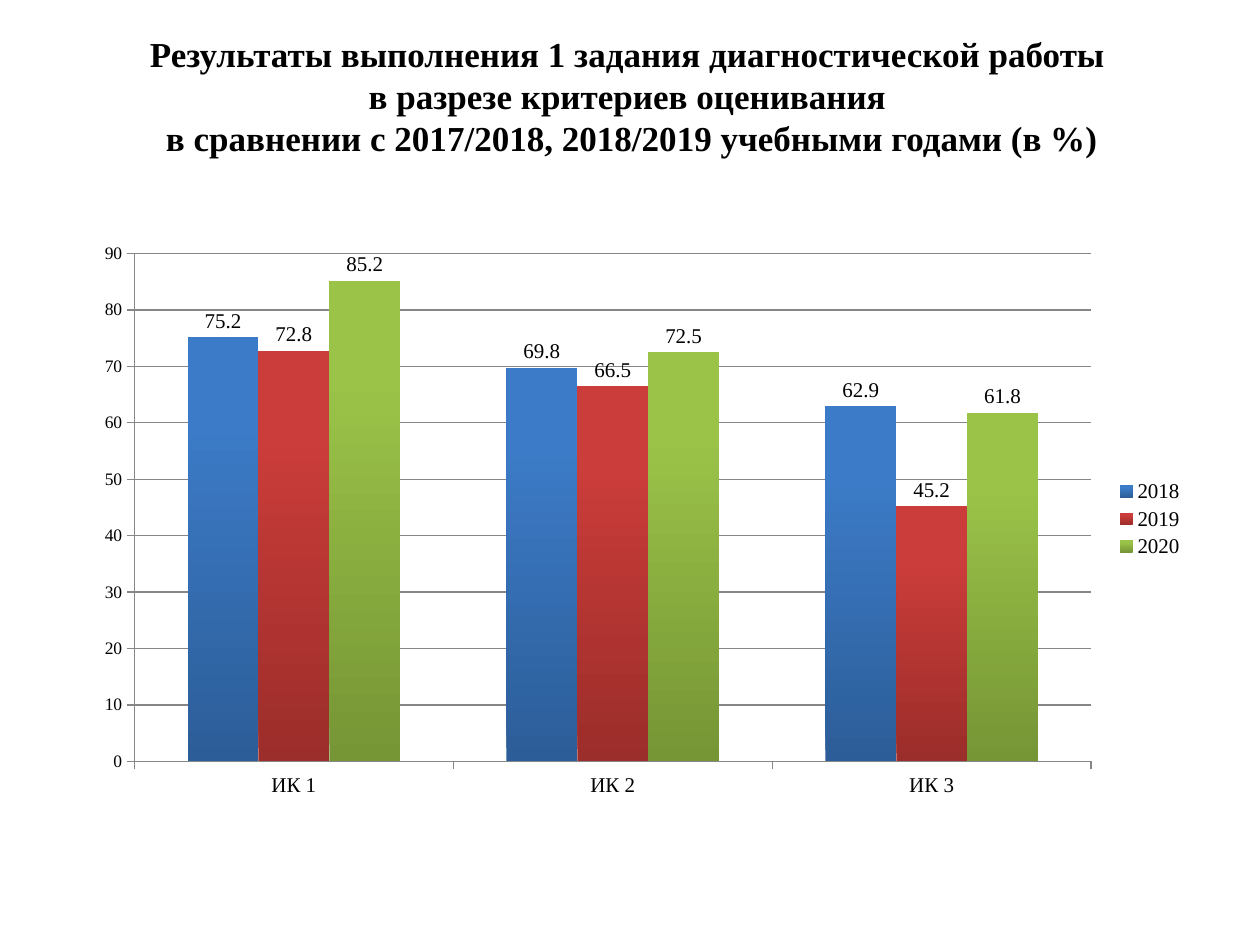
"""Build a slide comparing diagnostic results by criterion over three years."""
from lxml.etree import SubElement
from pptx import Presentation
from pptx.chart.data import CategoryChartData
from pptx.dml.color import RGBColor
from pptx.enum.chart import XL_CHART_TYPE, XL_LABEL_POSITION, XL_LEGEND_POSITION, XL_TICK_MARK
from pptx.enum.text import MSO_ANCHOR, PP_ALIGN
from pptx.oxml.ns import qn
from pptx.util import Inches, Pt

FONT = "Times New Roman"
COLORS = {
    "text": "000000",
    "line": "868686",
    "2018": ("2C5D98", "3C7BC7"),
    "2019": ("9B2D2A", "CB3D3A"),
    "2020": ("769535", "9BC348"),
}
TITLE = [
    "Результаты выполнения 1 задания диагностической работы ",
    "в разрезе критериев оценивания ",
    "в сравнении с 2017/2018, 2018/2019 учебными годами (в %)",
]
CRITERIA = ["ИК 1", "ИК 2", "ИК 3"]
RESULTS = {
    "2018": (75.2, 69.8, 62.9),
    "2019": (72.8, 66.5, 45.2),
    "2020": (85.2, 72.5, 61.8),
}
PLOT_LAYOUT = {"x": 0.045, "y": 0.04, "w": 0.86, "h": 0.88}


def style_font(font, size, bold=False):
    font.name = FONT
    font.size = Pt(size)
    font.bold = bold
    font.color.rgb = RGBColor.from_string(COLORS["text"])


def style_line(line):
    line.color.rgb = RGBColor.from_string(COLORS["line"])
    line.width = Pt(0.75)


def add_title(page):
    box = page.shapes.add_textbox(Inches(1.06), Inches(0.2), Inches(7.91), Inches(1.11))
    frame = box.text_frame
    frame.word_wrap = False
    frame.vertical_anchor = MSO_ANCHOR.MIDDLE
    frame.text = "\n".join(TITLE)
    for para in frame.paragraphs:
        para.alignment = PP_ALIGN.CENTER
        style_font(para.font, 20, bold=True)


def place_plot(chart):
    plot_area = chart.plots[0]._element.getparent()
    for layout in plot_area.findall(qn("c:layout")):
        plot_area.remove(layout)
    layout = SubElement(plot_area, qn("c:layout"))
    plot_area.insert(0, layout)
    manual = SubElement(layout, qn("c:manualLayout"))
    settings = {"layoutTarget": "inner", "xMode": "edge", "yMode": "edge", **PLOT_LAYOUT}
    for name, value in settings.items():
        SubElement(manual, qn(f"c:{name}")).set("val", str(value))


def style_series(series):
    fill = series.format.fill
    fill.gradient()
    fill.gradient_angle = 90
    for stop, color, position in zip(fill.gradient_stops, COLORS[series.name], (0, 0.8)):
        stop.color.rgb = RGBColor.from_string(color)
        stop.position = position
    labels = series.data_labels
    labels.show_value = True
    labels.position = XL_LABEL_POSITION.OUTSIDE_END
    labels.number_format = "0.0"
    labels.number_format_is_linked = False
    style_font(labels.font, 12)


def add_results_chart(page):
    data = CategoryChartData()
    data.categories = CRITERIA
    for year, values in RESULTS.items():
        data.add_series(year, values)
    chart = page.shapes.add_chart(
        XL_CHART_TYPE.COLUMN_CLUSTERED,
        Inches(0.67), Inches(1.83), Inches(8.83), Inches(4.58), data,
    ).chart
    chart.has_title = False
    chart.font.name = "Calibri"
    chart.font.size = Pt(10)
    plot = chart.plots[0]
    plot.gap_width = 150
    plot.vary_by_categories = False
    for series in plot.series:
        style_series(series)
    for axis, size in ((chart.category_axis, 12), (chart.value_axis, 10)):
        axis.major_tick_mark = XL_TICK_MARK.OUTSIDE
        style_font(axis.tick_labels.font, size)
        style_line(axis.format.line)
    values = chart.value_axis
    values.minimum_scale, values.maximum_scale, values.major_unit = 0, 90, 10
    values.has_major_gridlines = True
    style_line(values.major_gridlines.format.line)
    chart.has_legend = True
    chart.legend.position = XL_LEGEND_POSITION.RIGHT
    chart.legend.include_in_layout = False
    style_font(chart.legend.font, 12)
    place_plot(chart)


def main():
    deck = Presentation()
    deck.slide_width, deck.slide_height = Inches(10), Inches(7.5)
    page = deck.slides.add_slide(deck.slide_layouts[6])
    add_title(page)
    add_results_chart(page)
    deck.save("out.pptx")


if __name__ == "__main__":
    main()
